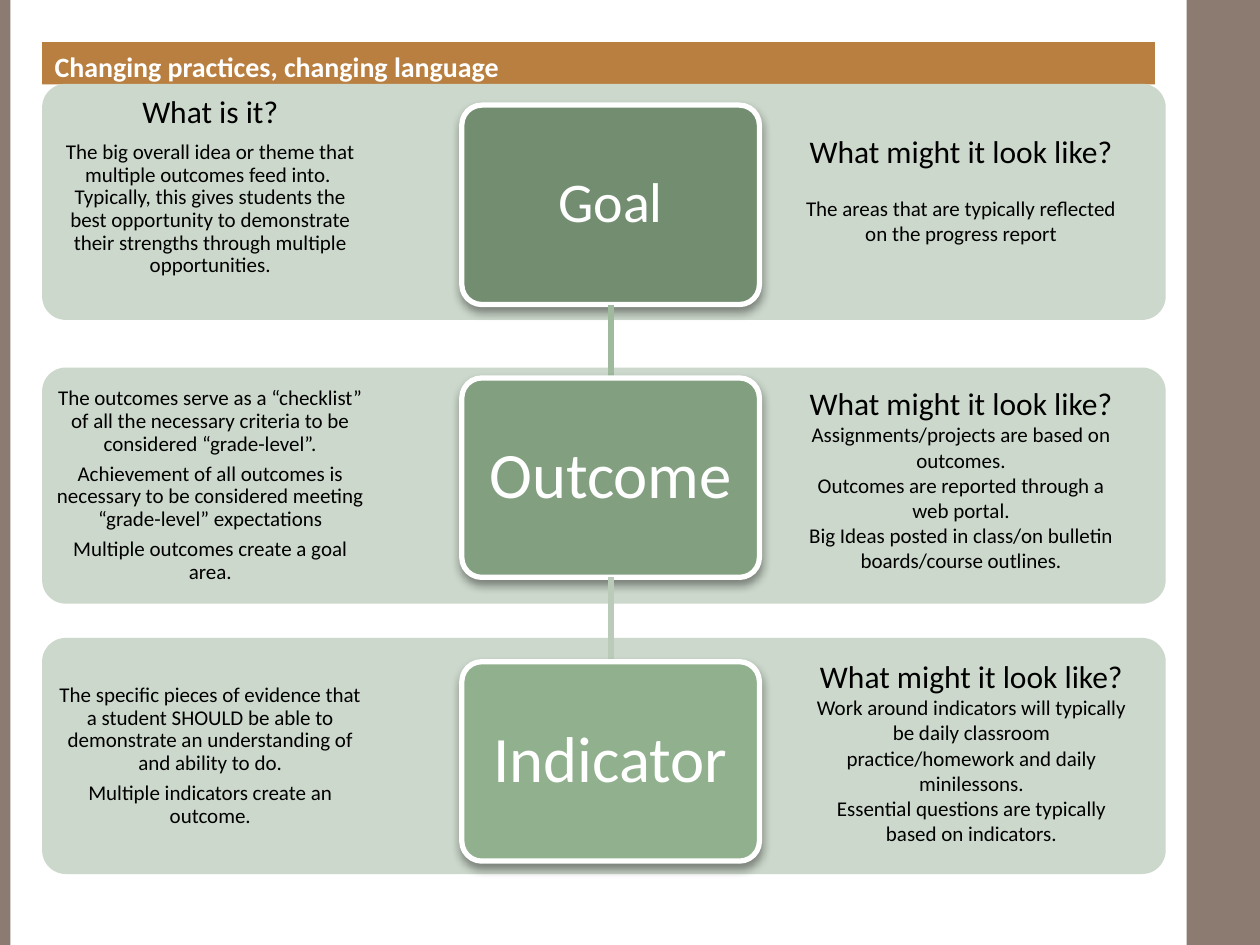
from lxml.etree import SubElement
from pptx import Presentation
from pptx.dml.color import RGBColor
from pptx.enum.shapes import MSO_CONNECTOR as CONN, MSO_SHAPE as SHAPE
from pptx.enum.text import MSO_ANCHOR as ANCHOR, MSO_AUTO_SIZE as FIT, PP_ALIGN as ALIGN
from pptx.oxml.ns import qn
from pptx.util import Cm, Pt

BAND_LEFT, BAND_W, BAND_H = 0.85, 22.65, 4.76
CARD_LEFT, CARD_W, CARD_H = 9.31, 6, 4.02
HEADING = "What might it look like?"
LEVELS = [
    {
        "name": "Goal", "size": 32, "fill": "738D70", "link": None,
        "band_top": 1.69, "card_top": 2.12, "detail_at": (15.88, 2.54),
        "about": [
            ("What is it?", 18),
            ("The big overall idea or theme that multiple outcomes feed into.  Typically, "
             "this gives students the best opportunity to demonstrate their strengths "
             "through multiple opportunities.", 12),
        ],
        "about_insets": (0.36, 0, 0.36, 0.61), "heading_gap": 14.6,
        "details": ["The areas that are typically reflected on the progress report"],
    },
    {
        "name": "Outcome", "size": 37, "fill": "82A07F", "link": "9FBA9D",
        "band_top": 7.41, "card_top": 7.62, "detail_at": (15.88, 7.62),
        "about": [
            ("The outcomes serve as a “checklist” of all the necessary criteria to be "
             "considered “grade-level”.", 12),
            ("Achievement of all outcomes is necessary to be considered meeting "
             "“grade-level” expectations", 12),
            ("Multiple outcomes create a goal area.", 12),
        ],
        "about_insets": (0.24,) * 4, "heading_gap": 0,
        "details": [
            "Assignments/projects are based on outcomes.",
            "Outcomes are reported through a web portal.",
            "Big Ideas posted in class/on bulletin boards/course outlines.",
        ],
    },
    {
        "name": "Indicator", "size": 37, "fill": "91B18E", "link": "BACCB9",
        "band_top": 12.86, "card_top": 13.34, "detail_at": (16.09, 13.12),
        "about": [
            ("The specific pieces of evidence that a student SHOULD be able to "
             "demonstrate an understanding of and ability to do.", 12),
            ("Multiple indicators create an outcome.", 12),
        ],
        "about_insets": (0.24,) * 4, "heading_gap": 0,
        "details": [
            "Work around indicators will typically be daily classroom practice/homework "
            "and daily minilessons.",
            "Essential questions are typically based on indicators.",
        ],
    },
]


def color(value):
    return RGBColor.from_string(value)


def set_attrs(target, values):
    for name, value in values.items():
        setattr(target, name, value)


def set_insets(tf, insets):
    sides = ("margin_left", "margin_top", "margin_right", "margin_bottom")
    set_attrs(tf, {side: Cm(inset) for side, inset in zip(sides, insets)})


def write(p, text, size, ink="000000", bold=False, **layout):
    set_attrs(p, {"alignment": ALIGN.CENTER, **layout})
    r = p.add_run()
    r.text = text
    set_attrs(r.font, {"name": "Calibri", "size": Pt(size), "bold": bold})
    r.font.color.rgb = color(ink)


def next_paragraph(tf, index):
    return tf.add_paragraph() if index else tf.paragraphs[0]


def add_block(s, kind, left, top, width, height, fill):
    sp = s.shapes.add_shape(kind, Cm(left), Cm(top), Cm(width), Cm(height))
    sp.shadow.inherit = False
    sp.fill.solid()
    sp.fill.fore_color.rgb = color(fill)
    sp.line.fill.background()
    if kind == SHAPE.ROUNDED_RECTANGLE:
        sp.adjustments[0] = 0.1
    return sp


def add_textbox(s, left, top, width, height, **frame):
    tf = s.shapes.add_textbox(Cm(left), Cm(top), Cm(width), Cm(height)).text_frame
    set_attrs(tf, {"word_wrap": True, **frame})
    return tf


def add_title(s, text):
    sp = s.shapes.title
    set_attrs(sp, {"left": Cm(0.85), "top": Cm(0.85), "width": Cm(22.43), "height": Cm(0.85)})
    sp.fill.solid()
    sp.fill.fore_color.rgb = color("B87F40")
    tf = sp.text_frame
    set_attrs(tf, {"word_wrap": True, "auto_size": FIT.NONE, "vertical_anchor": ANCHOR.TOP})
    set_insets(tf, (0.25, 0.15, 0.25, 0.13))
    write(tf.paragraphs[0], text, 16, "FFFFFF", True, alignment=ALIGN.LEFT)


def add_about(s, level):
    tf = add_textbox(s, BAND_LEFT, level["band_top"], 6.78, BAND_H,
                     vertical_anchor=ANCHOR.MIDDLE)
    set_insets(tf, level["about_insets"])
    for i, (text, size) in enumerate(level["about"]):
        write(next_paragraph(tf, i), text, size, line_spacing=0.9,
              space_after=Pt(size * 0.35))


def add_card_shadow(sp):
    effects = sp._element.spPr.find(qn("a:effectLst"))
    shadow = SubElement(effects, qn("a:outerShdw"), blurRad=str(Pt(5.2)), dist=str(Pt(3)),
                        dir="5400000", rotWithShape="0")
    black = SubElement(shadow, qn("a:srgbClr"), val="000000")
    SubElement(black, qn("a:alpha"), val="40000")


def add_card(s, level):
    sp = add_block(s, SHAPE.ROUNDED_RECTANGLE, CARD_LEFT, level["card_top"],
                   CARD_W, CARD_H, level["fill"])
    sp.line.color.rgb = color("FFFFFF")
    sp.line.width = Pt(3)
    add_card_shadow(sp)
    tf = sp.text_frame
    set_attrs(tf, {"word_wrap": True, "vertical_anchor": ANCHOR.MIDDLE})
    write(tf.paragraphs[0], level["name"], level["size"], "FFFFFF", line_spacing=0.9)
    return sp


def add_link(s, upper, ink):
    link = s.shapes.add_connector(CONN.STRAIGHT, 0, 0, 0, 0)
    link.begin_connect(upper, 2)
    link.line.color.rgb = color(ink)
    link.line.width = Pt(3.35)
    SubElement(link._element.spPr, qn("a:effectLst"))
    return link


def add_cards(s):
    upper = None
    for level in LEVELS:
        link = add_link(s, upper, level["link"]) if upper else None
        card = add_card(s, level)
        if link:
            link.end_connect(card, 0)
        upper = card


def add_details(s, level):
    height = 2.57 if level["heading_gap"] else 4.11
    tf = add_textbox(s, *level["detail_at"], 6.99, height, auto_size=FIT.SHAPE_TO_FIT_TEXT)
    write(tf.paragraphs[0], HEADING, 18, space_after=Pt(level["heading_gap"]))
    for text in level["details"]:
        write(tf.add_paragraph(), text, 12)


def main():
    prs = Presentation()
    set_attrs(prs, {"slide_width": Cm(25.4), "slide_height": Cm(19.05)})
    s = prs.slides.add_slide(prs.slide_layouts[5])
    for left, width in ((23.92, 1.48), (0, 0.21)):
        add_block(s, SHAPE.RECTANGLE, left, 0, width, 19.05, "8C7B70")
    add_title(s, "Changing practices, changing language")
    for level in LEVELS:
        add_block(s, SHAPE.ROUNDED_RECTANGLE, BAND_LEFT, level["band_top"],
                  BAND_W, BAND_H, "CCD8CB")
        add_about(s, level)
    add_cards(s)
    for level in LEVELS:
        add_details(s, level)
    prs.save("out.pptx")


if __name__ == "__main__":
    main()
